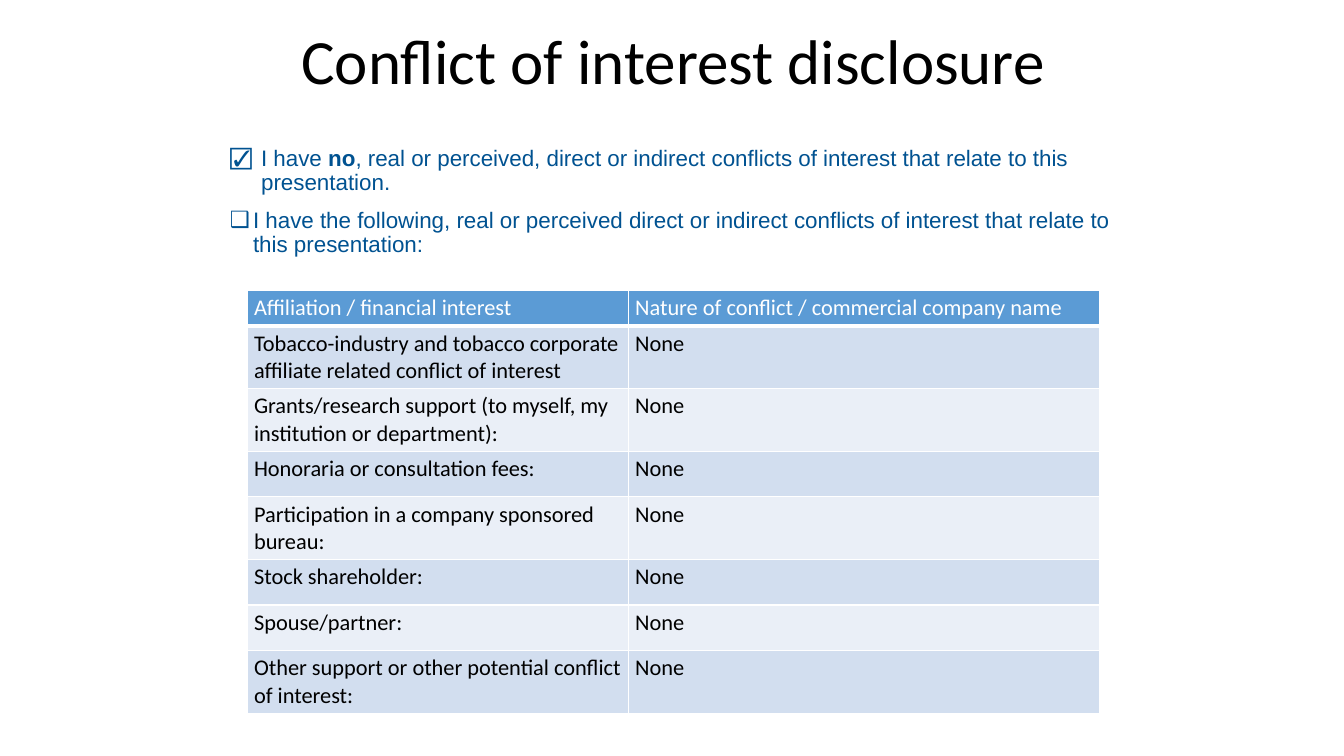
from lxml import etree
from pptx import Presentation
from pptx.dml.color import RGBColor
from pptx.enum.text import MSO_ANCHOR, MSO_AUTO_SIZE, PP_ALIGN
from pptx.oxml.ns import qn
from pptx.util import Inches, Pt

CENTER, LEFT = PP_ALIGN.CENTER, PP_ALIGN.LEFT
TOP, BOTTOM = MSO_ANCHOR.TOP, MSO_ANCHOR.BOTTOM
NO_AUTOFIT = MSO_AUTO_SIZE.NONE

COLORS = {
    "black": "000000",
    "white": "FFFFFF",
    "statement": "005291",
    "header": "5B9BD5",
    "odd_row": "D2DEEF",
    "even_row": "EAEFF7",
}


def style_font(font, name, size, color):
    font.name = name
    font.size = Pt(size)
    font.color.rgb = RGBColor.from_string(COLORS[color])


def add_border(cell, side, width):
    line = etree.SubElement(cell._tc.get_or_add_tcPr(), qn(f"a:{side}"), w=str(Pt(width)))
    fill = etree.SubElement(line, qn("a:solidFill"))
    etree.SubElement(fill, qn("a:srgbClr"), val=COLORS["white"])


prs = Presentation()
prs.slide_width, prs.slide_height = Inches(13.33), Inches(7.5)
slide = prs.slides.add_slide(prs.slide_layouts[1])

title = slide.shapes.title
title.left, title.top, title.width, title.height = map(Inches, (2.6, 0.04, 8.15, 0.97))
heading = title.text_frame
heading.text = "Conflict of interest disclosure"
heading.auto_size = NO_AUTOFIT
heading.vertical_anchor = BOTTOM
heading.margin_left = heading.margin_right = Inches(0.07)
heading.margin_top = heading.margin_bottom = Inches(0.04)
heading.paragraphs[0].alignment = CENTER
heading.paragraphs[0].line_spacing = 0.9
style_font(heading.paragraphs[0].runs[0].font, "Calibri", 45, "black")

STATEMENTS = [
    ("☑", 0.31, 0, [
        "I have ",
        "no",
        ", real or perceived, direct or indirect conflicts of interest that relate to this presentation.",
    ]),
    ("❑", 0.23, 10, [
        "I have the following, real or perceived direct or indirect conflicts of interest "
        "that relate to this presentation:",
    ]),
]

body = slide.placeholders[1]
body.left, body.top, body.width, body.height = map(Inches, (2.18, 1.41, 9, 5.2))
declaration = body.text_frame
declaration.auto_size = NO_AUTOFIT
declaration.vertical_anchor = TOP
declaration.text = "\n".join("".join(parts) for *_, parts in STATEMENTS)
for statement, (checkbox, indent, space, parts) in zip(declaration.paragraphs, STATEMENTS):
    statement.clear()
    properties = statement._p.get_or_add_pPr()
    properties.set("marL", str(Inches(indent)))
    properties.set("indent", str(-Inches(indent)))
    etree.SubElement(properties, qn("a:buChar"), char=checkbox)
    statement.alignment = LEFT
    statement.line_spacing = 0.9
    statement.space_before = Pt(space)
    for part in parts:
        run = statement.add_run()
        run.text = part
        style_font(run.font, "Arial", 16, "statement")
        run.font.bold = part == "no"

DISCLOSURES = [
    ("Affiliation / financial interest", "Nature of conflict / commercial company name"),
    ("Tobacco-industry and tobacco corporate affiliate related conflict of interest", "None"),
    ("Grants/research support (to myself, my institution or department):", "None"),
    ("Honoraria or consultation fees:", "None"),
    ("Participation in a company sponsored bureau:", "None"),
    ("Stock shareholder:", "None"),
    ("Spouse/partner:", "None"),
    ("Other support or other potential conflict of interest:", "None"),
]
COLUMN_WIDTHS = [3.78, 4.68]
ROW_HEIGHTS = [0.33, 0.59, 0.58, 0.45, 0.47, 0.45, 0.45, 0.45]

interests = slide.shapes.add_table(
    len(DISCLOSURES), len(COLUMN_WIDTHS), Inches(2.45), Inches(2.88),
    Inches(sum(COLUMN_WIDTHS)), Inches(sum(ROW_HEIGHTS)),
).table
for column, width in zip(interests.columns, COLUMN_WIDTHS):
    column.width = Inches(width)

for r, (disclosure, height) in enumerate(zip(DISCLOSURES, ROW_HEIGHTS)):
    interests.rows[r].height = Inches(height)
    is_header = r == 0
    fill_color = "header" if is_header else "odd_row" if r % 2 else "even_row"
    for c, wording in enumerate(disclosure):
        cell = interests.cell(r, c)
        cell.text = wording
        cell.margin_left = cell.margin_right = Inches(0.07)
        cell.margin_top = cell.margin_bottom = Inches(0.04)
        font = cell.text_frame.paragraphs[0].runs[0].font
        style_font(font, "Calibri", 16, "white" if is_header else "black")
        font.bold = False
        for side in ("lnL", "lnR", "lnT", "lnB"):
            add_border(cell, side, 3 if is_header and side == "lnB" else 1)
        cell.fill.solid()
        cell.fill.fore_color.rgb = RGBColor.from_string(COLORS[fill_color])

prs.save("out.pptx")
